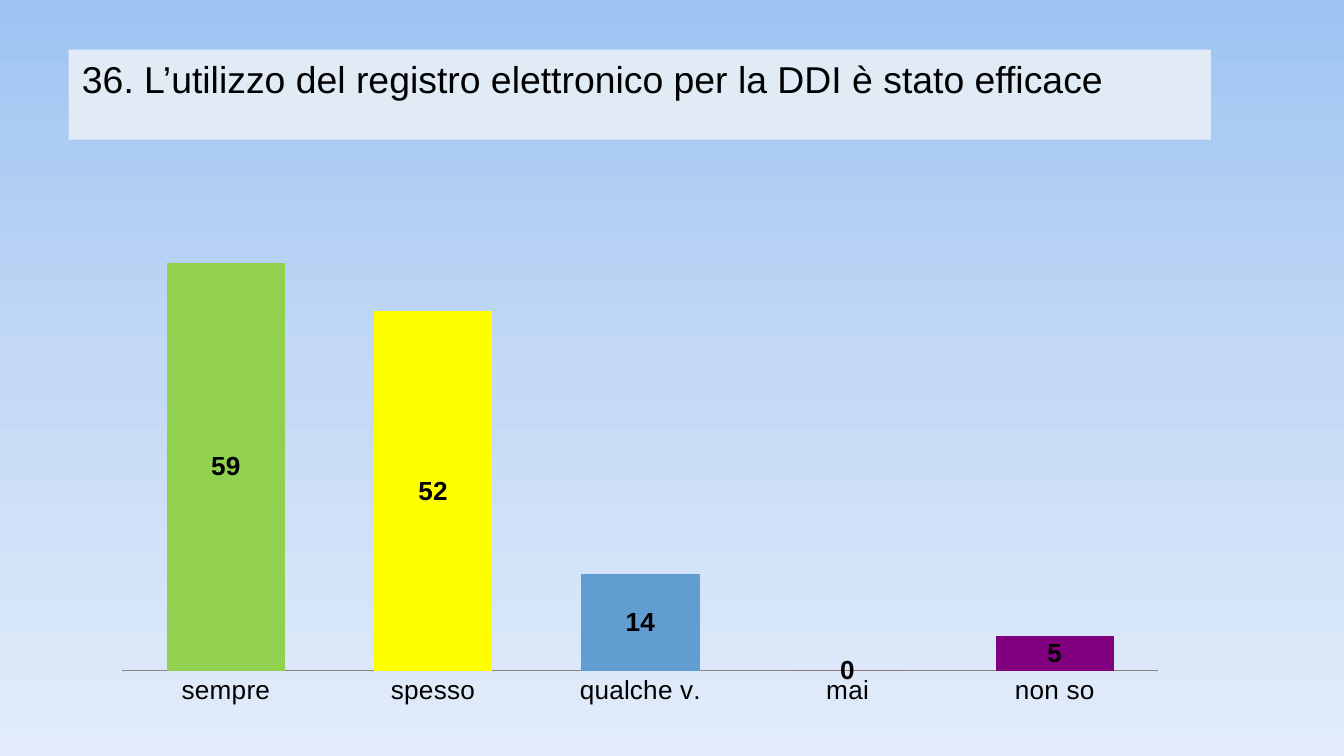
from copy import deepcopy

from pptx import Presentation
from pptx import util as u
from pptx.chart import data
from pptx.dml import color
from pptx.enum import chart as charts, text

TITLE = "36. L’utilizzo del registro elettronico per la DDI è stato efficace"
ANSWERS = [
    ("sempre", 59, "92D050"),
    ("spesso", 52, "FFFF00"),
    ("qualche v.", 14, "629DD1"),
    ("mai", 0, "FF0000"),
    ("non so", 5, "800080"),
]
BACKGROUND = [(0, "9EC4F2"), (0.5, "C4D9F5"), (1, "E2ECFA")]
TITLE_BOX = (36.72, 26.64, 612, 48.24)
CHART_BOX = (54, 94.32, 578.16, 289.44)


def rgb(value):
    return color.RGBColor.from_string(value)


def format_font(font, size, bold=False):
    font.name = "Arial"
    font.size = u.Pt(size)
    font.bold = bold
    font.color.rgb = rgb("000000")


def paint_background(slide):
    fill = slide.background.fill
    fill.gradient()
    fill.gradient_angle = 270
    first = fill._fill._gradFill.gsLst[0]
    first.addnext(deepcopy(first))
    for stop, (position, value) in zip(fill.gradient_stops, BACKGROUND):
        stop.position = position
        stop.color.rgb = rgb(value)


def add_title(slide):
    title = slide.shapes.title
    title.left, title.top, title.width, title.height = map(u.Pt, TITLE_BOX)
    title.fill.solid()
    title.fill.fore_color.rgb = rgb("E0EBF6")
    frame = title.text_frame
    frame.text = TITLE
    frame.word_wrap = True
    frame.auto_size = text.MSO_AUTO_SIZE.NONE
    frame.vertical_anchor = text.MSO_ANCHOR.TOP
    paragraph = frame.paragraphs[0]
    paragraph.alignment = text.PP_ALIGN.LEFT
    format_font(paragraph.font, 20)


def add_answer_chart(slide):
    names, values, colours = zip(*ANSWERS)
    chart_data = data.CategoryChartData()
    chart_data.categories = names
    chart_data.add_series("Series 1", values)
    chart = slide.shapes.add_chart(
        charts.XL_CHART_TYPE.COLUMN_STACKED, *map(u.Pt, CHART_BOX), chart_data
    ).chart
    chart.has_legend = False
    chart.has_title = False
    format_font(chart.font, 10)

    category_axis = chart.category_axis
    category_axis.major_tick_mark = charts.XL_TICK_MARK.NONE
    category_axis.format.line.color.rgb = rgb("878787")
    format_font(category_axis.tick_labels.font, 14)
    value_axis = chart.value_axis
    value_axis.visible = False
    value_axis.has_major_gridlines = False
    value_axis.minimum_scale = 0
    value_axis.maximum_scale = 70

    plot = chart.plots[0]
    plot.gap_width = 75
    plot.overlap = 100
    plot.vary_by_categories = False
    series = plot.series[0]
    for index, value in enumerate(colours):
        fill = series.points[index].format.fill
        fill.solid()
        fill.fore_color.rgb = rgb(value)
    labels = series.data_labels
    labels.show_value = True
    labels.position = charts.XL_LABEL_POSITION.CENTER
    format_font(labels.font, 14, bold=True)


presentation = Presentation()
presentation.slide_width = u.Pt(720)
presentation.slide_height = u.Pt(405)
slide = presentation.slides.add_slide(presentation.slide_layouts[5])
paint_background(slide)
add_title(slide)
add_answer_chart(slide)
presentation.save("out.pptx")
